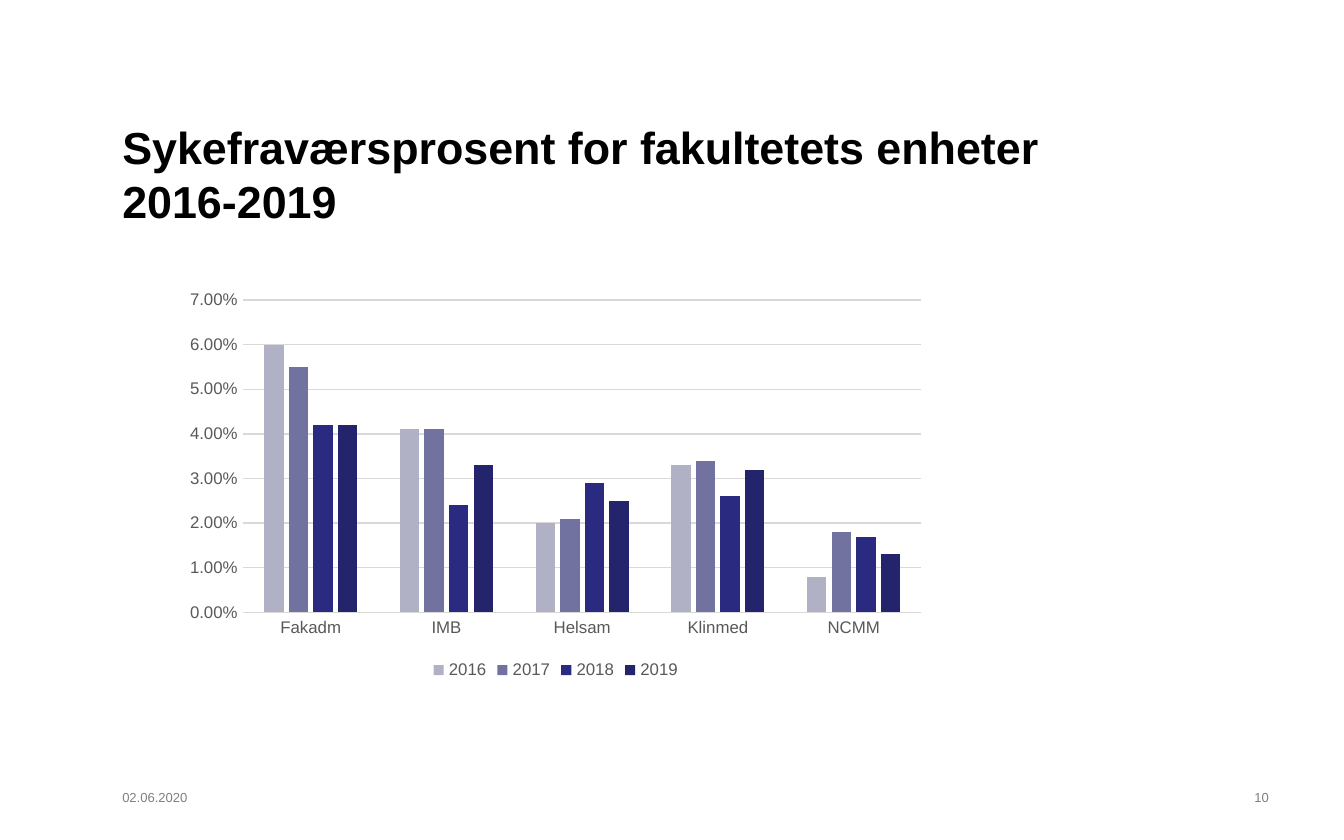
from pptx import Presentation
from pptx.chart.data import CategoryChartData as ChartData
from pptx.dml.color import RGBColor as RGB
from pptx.enum.chart import XL_CHART_TYPE as Kind, XL_LEGEND_POSITION as Place, XL_TICK_MARK as Tick
from pptx.enum.text import MSO_ANCHOR as Anchor, PP_ALIGN as Align
from pptx.util import Inches, Pt

TITLE = "Sykefraværsprosent for fakultetets enheter \v2016-2019"
FOOT = [
    ("02.06.2020", (0.83, 5.83, 2.08, 0.42), Align.LEFT),
    ("10", (8.77, 5.83, 0.75, 0.42), Align.RIGHT),
]
UNITS = ["Fakadm", "IMB", "Helsam", "Klinmed", "NCMM"]
YEARS = [
    ("2016", (0.06, 0.041, 0.02, 0.033, 0.008)),
    ("2017", (0.055, 0.041, 0.021, 0.034, 0.018)),
    ("2018", (0.042, 0.024, 0.029, 0.026, 0.017)),
    ("2019", (0.042, 0.033, 0.025, 0.032, 0.013)),
]
COLORS = {
    "title": "000000", "foot": "808080", "label": "595959", "grid": "D9D9D9",
    "2016": "B1B1C6", "2017": "7272A1", "2018": "2A2A81", "2019": "24246D",
}
FRAME = {
    "margin_left": Inches(0.08), "margin_right": Inches(0.08),
    "margin_top": Inches(0.04), "margin_bottom": Inches(0.04), "word_wrap": True,
}


def apply(item, values):
    for name, value in values.items():
        setattr(item, name, value)


def style(font, size, color, bold=False):
    apply(font, {"name": "Arial", "size": Pt(size), "bold": bold})
    font.color.rgb = RGB.from_string(COLORS[color])


def rule(line):
    line.color.rgb = RGB.from_string(COLORS["grid"])
    line.width = Pt(0.75)


def box(*nums):
    return [Inches(num) for num in nums]


def write(shape, text, align, size, color, anchor, bold=False):
    frame = shape.text_frame
    apply(frame, {**FRAME, "vertical_anchor": anchor})
    frame.text = text
    para = frame.paragraphs[0]
    para.alignment = align
    for run in para.runs:
        style(run.font, size, color, bold)


def add_title(slide):
    title = slide.shapes.title
    apply(title, dict(zip(("left", "top", "width", "height"), box(0.83, 0.77, 8.66, 1.04))))
    write(title, TITLE, Align.LEFT, 24, "title", Anchor.MIDDLE, True)


def add_chart(slide):
    data = ChartData(number_format="0.00%")
    data.categories = UNITS
    for year, rates in YEARS:
        data.add_series(year, rates)
    chart = slide.shapes.add_chart(Kind.COLUMN_CLUSTERED, *box(1.3, 2.1, 5.67, 3), data).chart
    apply(chart, {"has_title": False, "has_legend": True})
    style(chart.font, 10, "title")
    apply(chart.legend, {"position": Place.BOTTOM, "include_in_layout": False})
    style(chart.legend.font, 9, "label")
    units, rates = chart.category_axis, chart.value_axis
    for axis in (units, rates):
        apply(axis, {"major_tick_mark": Tick.NONE, "minor_tick_mark": Tick.NONE})
        style(axis.tick_labels.font, 9, "label")
    rule(units.format.line)
    apply(rates, {"minimum_scale": 0, "maximum_scale": 0.07, "major_unit": 0.01})
    apply(rates.tick_labels, {"number_format": "0.00%", "number_format_is_linked": False})
    rates.format.line.fill.background()
    rule(rates.major_gridlines.format.line)
    plot = chart.plots[0]
    apply(plot, {"gap_width": 219, "overlap": -27, "vary_by_categories": False})
    for bars in plot.series:
        bars.format.fill.solid()
        bars.format.fill.fore_color.rgb = RGB.from_string(COLORS[bars.name])


def main():
    deck = Presentation()
    apply(deck, {"slide_width": Inches(10), "slide_height": Inches(6.25)})
    slide = deck.slides.add_slide(deck.slide_layouts[5])
    add_title(slide)
    for text, place, align in FOOT:
        write(slide.shapes.add_textbox(*box(*place)), text, align, 7, "foot", Anchor.TOP)
    add_chart(slide)
    deck.save("out.pptx")


if __name__ == "__main__":
    main()
